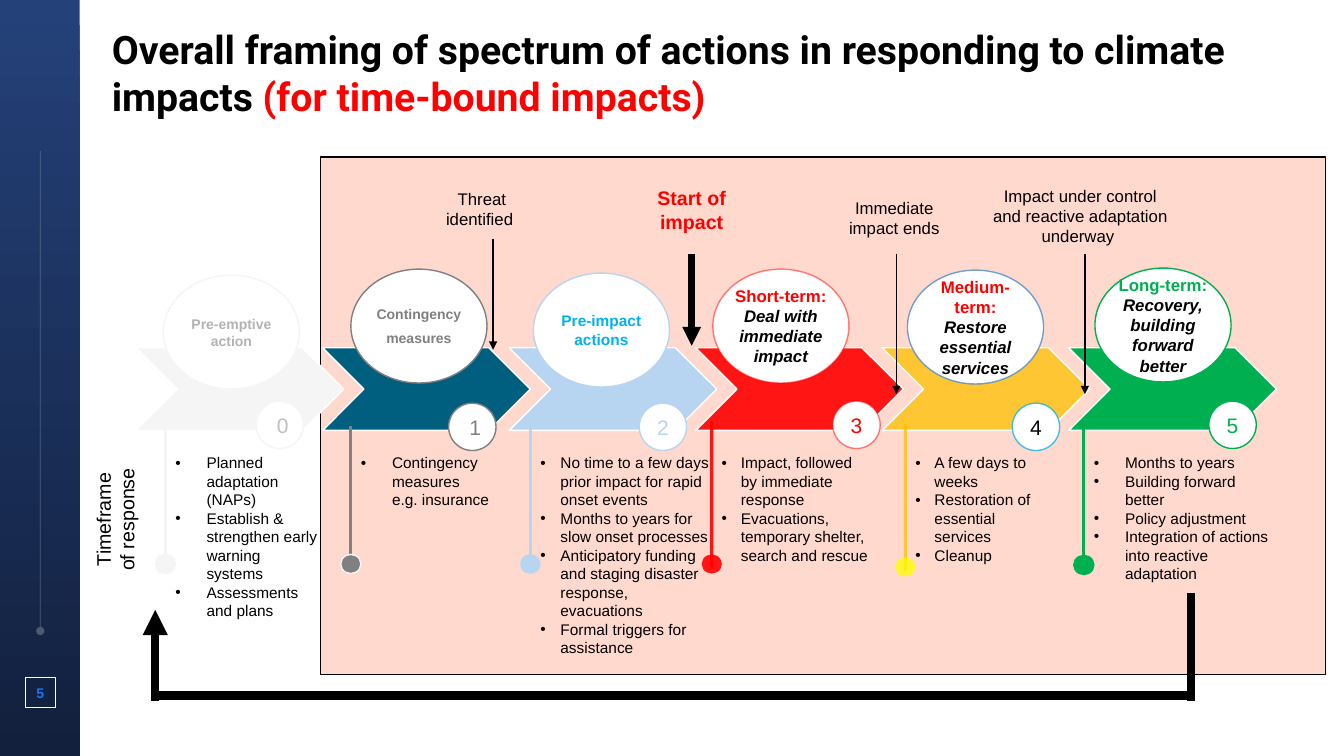
from dataclasses import dataclass

from lxml.etree import SubElement
from pptx import Presentation
from pptx.dml.color import RGBColor
from pptx.enum.shapes import MSO_CONNECTOR as Line, MSO_SHAPE as Preset
from pptx.enum.text import MSO_ANCHOR as Anchor, PP_ALIGN as Align
from pptx.oxml.ns import qn
from pptx.util import Inches, Pt


@dataclass(frozen=True)
class Theme:
    """Colours, as hex or (hex, opacity percent), fonts and type sizes."""
    black: str = "000000"
    white: str = "FFFFFF"
    red: str = "FF0000"
    soft_red: tuple = ("FF0000", 90)
    half_red: tuple = ("FF0000", 50)
    pale: str = "F5F5F5"
    faded: str = "B3B3B3"
    silver: str = "BFBFBF"
    gray: str = "808080"
    teal: str = "005F7F"
    ice: str = "B7D4F1"
    ice_edge: tuple = ("B7D4F1", 25)
    sky: str = "00B0F0"
    sky_edge: tuple = ("00B0F0", 75)
    steel_edge: tuple = ("4385C7", 75)
    amber: tuple = ("FFC000", 75)
    yellow: tuple = ("FFFF00", 75)
    green: str = "00B050"
    peach: str = "FFD9CD"
    navy_top: str = "244179"
    navy_bottom: str = "12203D"
    rail_line: tuple = ("FFFFFF", 24)
    page: str = "1775F9"
    heading_font: str = "Roboto"
    body_font: str = "Arial"
    title: int = 28
    badge: int = 15
    strong: int = 14
    label: int = 12
    action: int = 11
    small: int = 10


T = Theme()


@dataclass(frozen=True)
class Stage:
    """One step of the response; x positions are offsets from its chevron."""
    chevron: object
    stem: object
    dot: object
    dot_edge: object
    ring: object
    badge_ring: object
    badge: str
    badge_color: str
    name: list
    name_size: int
    name_at: tuple
    badge_at: tuple
    stem_at: tuple
    actions: list
    actions_size: tuple
    indent: float


STAGES = [
    Stage(T.pale, T.pale, T.pale, T.pale, T.pale, T.pale, " 0", T.silver,
          [[("Pre-emptive action", T.faded, False)]], T.small,
          (0.27, -0.72), (1.19, 0.53), (0.29, 0.78, 2.18),
          ["Planned adaptation (NAPs)", "Establish & strengthen early warning systems",
           "Assessments and plans"], (1.62, 1.77), 0.31),
    Stage(T.teal, T.gray, T.gray, T.pale, T.gray, T.gray, " 1", T.gray,
          [[("Contingency", T.gray, False)], [("measures", T.gray, False)]], T.small,
          (0.28, -0.78), (1.25, 0.55), (0.28, 0.78, 2.18),
          ["Contingency measures \ne.g. insurance"], (1.92, 0.66), 0.31),
    Stage(T.ice, T.ice, T.ice, T.ice_edge, T.ice, T.ice, "2", T.ice,
          [[("Pre-impact actions", T.sky, False)]], T.action,
          (0.24, -0.74), (1.29, 0.55), (0.21, 0.72, 2.18),
          ["No time to a few days prior impact for rapid onset events",
           "Months to years for slow onset processes",
           "Anticipatory funding and staging disaster response, evacuations",
           "Formal triggers for assistance"], (1.91, 2.14), 0.2),
    Stage(T.soft_red, T.soft_red, T.soft_red, None, T.half_red, T.half_red, "3", T.red,
          [[("Short-term: ", T.red, False), ("Deal with immediate impact", T.black, True)]],
          T.label, (0.17, -0.78), (1.36, 0.53), (0.16, 0.73, 2.18),
          ["Impact, followed by immediate response",
           "Evacuations, temporary shelter, search and rescue"], (1.67, 1.21), 0.19),
    Stage(T.amber, T.amber, T.yellow, None, T.steel_edge, T.sky_edge, "4", T.black,
          [[("Medium-term: ", T.red, False), ("Restore essential services", T.black, True)]],
          T.label, (0.25, -0.77), (1.29, 0.55), (0.23, 0.75, 2.21),
          ["A few days to weeks", "Restoration of essential services", "Cleanup"],
          (1.54, 1.21), 0.19),
    Stage(T.green, T.green, T.green, T.green, T.green, T.green, "5", T.green,
          [[("Long-term:\n", T.green, False),
            ("Recovery, building forward better", T.black, True)]],
          T.label, (0.26, -0.79), (1.39, 0.53), (0.15, 0.79, 2.19),
          ["Months to years", "Building forward better", "Policy adjustment",
           "Integration of actions into reactive adaptation"], (2.02, 1.44), 0.31),
]


def paint(owner, fill, color, route):
    """Give a fill or line a solid colour, with opacity if it has one."""
    tone, opacity = color if isinstance(color, tuple) else (color, 100)
    fill.solid()
    fill.fore_color.rgb = RGBColor.from_string(tone)
    if opacity < 100:
        for node in owner.element.xpath(f"./p:spPr/{route}a:solidFill/a:srgbClr"):
            SubElement(node, qn("a:alpha"), val=str(opacity * 1000))


def draw(slide, preset, box, fill=None, edge=None, weight=1):
    """Add a preset shape without a shadow."""
    shape = slide.shapes.add_shape(preset, *map(Inches, box))
    shape.shadow.inherit = False
    if fill:
        paint(shape, shape.fill, fill, "")
    else:
        shape.fill.background()
    if edge:
        paint(shape, shape.line.fill, edge, "a:ln/")
        shape.line.width = Pt(weight)
    else:
        shape.line.fill.background()
    return shape


def connect(slide, start, end, color, weight, tip=None):
    """Add a straight line that may carry a tip at its end."""
    line = slide.shapes.add_connector(Line.STRAIGHT, *map(Inches, (*start, *end)))
    paint(line, line.line.fill, color, "a:ln/")
    line.line.width = Pt(weight)
    properties = line.element.spPr
    if tip:
        SubElement(properties.find(qn("a:ln")), qn("a:tailEnd"), type=tip)
    SubElement(properties, qn("a:effectLst"))


def write(shape, paragraphs, size, bold=False, align=Align.CENTER, anchor=Anchor.TOP,
          margins=(0, 0), font=T.body_font, gap=0, indent=0):
    """Fill a shape with paragraphs of (text, colour, italic) runs."""
    frame = shape.text_frame
    frame.word_wrap = True
    frame.vertical_anchor = anchor
    frame.margin_left = frame.margin_right = Inches(margins[0])
    frame.margin_top = frame.margin_bottom = Inches(margins[1])
    for index, runs in enumerate(paragraphs):
        paragraph = frame.add_paragraph() if index else frame.paragraphs[0]
        paragraph.alignment = align
        if index and gap:
            paragraph.space_before = Pt(gap)
        if indent:
            layout = paragraph._p.get_or_add_pPr()
            layout.set("marL", str(Inches(indent)))
            layout.set("indent", str(-Inches(indent)))
            SubElement(layout, qn("a:buFont"), typeface=T.body_font)
            SubElement(layout, qn("a:buChar"), char="•")
        for text, color, italic in runs:
            for order, piece in enumerate(text.split("\n")):
                if order:
                    paragraph.add_line_break()
                if piece:
                    run = paragraph.add_run()
                    run.text = piece
                    run.font.name, run.font.size = font, Pt(size)
                    run.font.bold, run.font.italic = bold, italic
                    run.font.color.rgb = RGBColor.from_string(color)


def text_box(slide, box, paragraphs, size, margins=(0.1, 0.05), **style):
    """Add a text box and return it."""
    holder = slide.shapes.add_textbox(*map(Inches, box))
    write(holder, paragraphs, size, margins=margins, **style)
    return holder


def side_rail(slide, left, top, width, height):
    """Draw the navy rail with its guide line and page number."""
    rail = draw(slide, Preset.RECTANGLE, (left, top, width, height), T.navy_top)
    rail.fill.gradient()
    rail.fill.gradient_angle = 270
    for stop, tone in zip(rail.fill.gradient_stops, (T.navy_top, T.navy_bottom)):
        stop.color.rgb = RGBColor.from_string(tone)
    middle = left + 0.4
    connect(slide, (middle, top + 1.5), (middle, top + 6.26), T.rail_line, 0.5, "oval")
    draw(slide, Preset.RECTANGLE, (left + 0.25, top + 6.72, 0.3, 0.3), None, T.white, 0.5)
    text_box(slide, (left + 0.25, top + 6.79, 0.3, 0.17), [[("5", T.page, False)]],
             T.small, margins=(0, 0), bold=True)


def stage_column(slide, stage, left, top, width, height):
    """Draw a stage's chevron, stem, name, badge and actions."""
    draw(slide, Preset.CHEVRON, (left, top, width, height), stage.chevron, T.white)
    offset, start, end = stage.stem_at
    stem = left + offset
    connect(slide, (stem, top + start), (stem, top + end), stage.stem, 2.25)
    draw(slide, Preset.OVAL, (stem - 0.1, top + end - 0.13, 0.2, 0.19),
         stage.dot, stage.dot_edge)
    name_x, name_y = stage.name_at
    name = draw(slide, Preset.OVAL, (left + name_x, top + name_y, 1.35, 1.13),
                T.white, stage.ring)
    write(name, stage.name, stage.name_size, bold=True, anchor=Anchor.MIDDLE, gap=5)
    badge_x, badge_y = stage.badge_at
    badge = draw(slide, Preset.OVAL, (left + badge_x, top + badge_y, 0.47, 0.47),
                 T.white, stage.badge_ring)
    write(badge, [[(stage.badge, stage.badge_color, False)]], T.badge, anchor=Anchor.MIDDLE)
    text_box(slide, (stem, top + 1, *stage.actions_size),
             [[(action, T.black, False)] for action in stage.actions],
             T.action, align=Align.LEFT, indent=stage.indent)


def milestones(slide, left, top):
    """Place the event labels and their arrows above the stages."""
    events = [
        ("Threat identified ", (1.14, 0.26, 0.92, 0.5), (1.71, 0.81, 1.91), False),
        ("Start of impact", (3.22, 0.24, 0.92, 0.57), (3.68, 0.96, 1.87), True),
        ("Immediate impact ends", (5.12, 0.35, 1.14, 0.5), (5.71, 0.96, 2.35), False),
        ("Impact under control and reactive adaptation underway ",
         (6.56, 0.23, 1.95, 0.71), (7.58, 0.96, 2.35), False),
    ]
    for event, (x, y, width, height), (arrow, start, end), key in events:
        text_box(slide, (left + x, top + y, width, height),
                 [[(event, T.red if key else T.black, False)]],
                 T.strong if key else T.label, bold=key)
        connect(slide, (left + arrow, top + start), (left + arrow, top + end),
                T.black, 4.5 if key else 1, "triangle")


def feedback_loop(slide, left, top, width, height):
    """Draw the heavy line leading from the last stage back to the first."""
    right, bottom = left + width, top + height
    connect(slide, (right, top - 0.17), (right, bottom), T.black, 6)
    connect(slide, (right, bottom - 0.05), (left, bottom - 0.05), T.black, 6)
    connect(slide, (left, bottom), (left, top), T.black, 6, "triangle")


def main():
    """Build and save the slide."""
    deck = Presentation()
    deck.slide_width, deck.slide_height = Inches(13.33), Inches(7.5)
    slide = deck.slides.add_slide(deck.slide_layouts[6])
    side_rail(slide, 0, 0, 0.79, 7.5)
    heading = [("Overall framing of spectrum of actions in responding to climate impacts ",
                T.black, False), ("(for time-bound impacts)", T.red, False)]
    text_box(slide, (1.11, 0.25, 11.86, 0.94), [heading], T.title, margins=(0, 0),
             bold=True, align=Align.LEFT, anchor=Anchor.MIDDLE, font=T.heading_font)
    draw(slide, Preset.RECTANGLE, (3.18, 1.56, 9.97, 5.13), T.peach, T.black)
    for index, stage in enumerate(STAGES):
        stage_column(slide, stage, 1.35 + 1.85 * index, 3.45, 2.06, 0.82)
    milestones(slide, 3.18, 1.56)
    feedback_loop(slide, 1.54, 6.05, 10.27, 0.9)
    timeframe = text_box(slide, (0.48, 4.87, 1.32, 0.57),
                         [[("Timeframe of response", T.black, False)]], T.strong)
    timeframe.rotation = 270
    deck.save("out.pptx")


if __name__ == "__main__":
    main()
